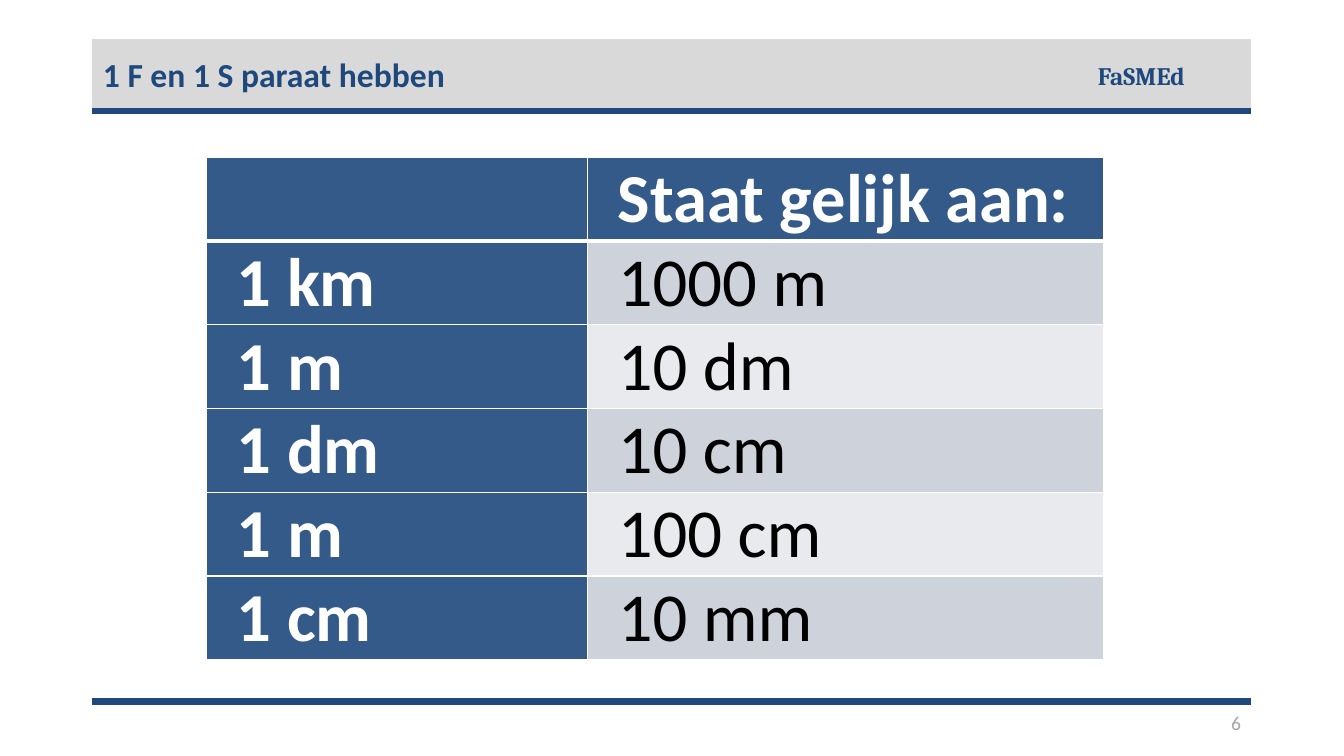
from lxml import etree
from pptx import Presentation
from pptx.dml import color
from pptx.enum import shapes, text
from pptx.oxml import ns
from pptx.util import Pt

NAVY = "1F497D"
WHITE = "FFFFFF"
HEADER_BLUE = "345A8A"
BAND_FILLS = ["CED2DA", "E8EAED"]
ROWS = [
    ("", "Staat gelijk aan:"),
    ("1 km", "1000 m"),
    ("1 m", "10 dm"),
    ("1 dm", "10 cm"),
    ("1 m", "100 cm"),
    ("1 cm", "10 mm"),
]


def rgb(value):
    return color.RGBColor.from_string(value)


def format_paragraph(paragraph, name, size, font_color, bold=False):
    font = paragraph.font
    font.name = name
    font.size = Pt(size)
    font.bold = bold
    font.color.rgb = rgb(font_color)


def add_rule(slide, left, top, width):
    rule = slide.shapes.add_connector(
        shapes.MSO_CONNECTOR.STRAIGHT, Pt(left), Pt(top), Pt(left + width), Pt(top))
    rule.line.color.rgb = rgb(NAVY)
    rule.line.width = Pt(4.5)
    etree.SubElement(rule._element.spPr, ns.qn("a:effectLst"))


def add_label(slide, left, top, width, height, label):
    shape = slide.shapes.add_textbox(Pt(left), Pt(top), Pt(width), Pt(height))
    shape.text_frame.word_wrap = True
    shape.text_frame.text = label
    return shape.text_frame


def add_header(slide, left, top, width, height):
    band = slide.shapes.add_shape(
        shapes.MSO_SHAPE.RECTANGLE, Pt(left), Pt(top), Pt(width), Pt(height))
    band.shadow.inherit = False
    band.fill.solid()
    band.fill.fore_color.rgb = rgb("D9D9D9")
    band.line.fill.background()
    add_rule(slide, left, top + height + 1.5, width)

    project = add_label(slide, left + width - 116.5, top + 11.5, 80, 29, "FaSMEd")
    format_paragraph(project.paragraphs[0], "Cambria", 18, NAVY, True)

    title = slide.shapes.title
    title.left, title.top = Pt(left + 0.7), Pt(top + 1.4)
    title.width, title.height = Pt(width), Pt(height + 1.5)
    frame = title.text_frame
    frame.text = "1 F en 1 S paraat hebben"
    frame.auto_size = text.MSO_AUTO_SIZE.NONE
    frame.vertical_anchor = text.MSO_ANCHOR.MIDDLE
    paragraph = frame.paragraphs[0]
    paragraph.alignment = text.PP_ALIGN.LEFT
    paragraph.line_spacing = 0.9
    format_paragraph(paragraph, "Calibri", 24, NAVY, True)
    slide.shapes._spTree.append(title._element)


def add_border(cell, side, width):
    properties = cell._tc.get_or_add_tcPr()
    line = etree.SubElement(properties, ns.qn(f"a:ln{side}"), w=str(Pt(width)))
    fill = etree.SubElement(line, ns.qn("a:solidFill"))
    etree.SubElement(fill, ns.qn("a:srgbClr"), val=WHITE)


def format_cell(cell, label, row, column):
    heading = row == 0 or column == 0
    for side in "LRTB":
        thick = (row == 0 and side == "B") or (row == 1 and side == "T")
        add_border(cell, side, 3 if thick else 1)
    cell.fill.solid()
    cell.fill.fore_color.rgb = rgb(HEADER_BLUE if heading else BAND_FILLS[(row - 1) % 2])
    cell.margin_left = cell.margin_right = Pt(21.6)
    cell.margin_top = cell.margin_bottom = 0
    cell.text = label
    format_paragraph(cell.text_frame.paragraphs[0], "Calibri", 49,
                     WHITE if heading else "000000", heading)


def add_units_table(slide, left, top, column_widths, height):
    frame = slide.shapes.add_table(
        len(ROWS), len(column_widths), Pt(left), Pt(top), Pt(sum(column_widths)), Pt(height))
    table = frame.table
    for column, width in zip(table.columns, column_widths):
        column.width = Pt(width)
    for row, labels in enumerate(ROWS):
        for column, label in enumerate(labels):
            format_cell(table.cell(row, column), label, row, column)


def add_footer(slide, left, top, width):
    add_rule(slide, left, top, width)
    frame = add_label(slide, left + width - 142, top + 3, 142, 24.5, "6")
    frame.vertical_anchor = text.MSO_ANCHOR.MIDDLE
    paragraph = frame.paragraphs[0]
    paragraph.alignment = text.PP_ALIGN.RIGHT
    format_paragraph(paragraph, "Calibri", 14, "A6A6A6")


def main():
    presentation = Presentation()
    presentation.slide_width = Pt(960)
    presentation.slide_height = Pt(540)
    slide = presentation.slides.add_slide(presentation.slide_layouts[5])
    add_footer(slide, 65.6, 501, 828)
    add_header(slide, 65.6, 28, 828, 49.7)
    add_units_table(slide, 147.6, 112.4, [272.2, 368.6], 353.5)
    presentation.save("out.pptx")


if __name__ == "__main__":
    main()
